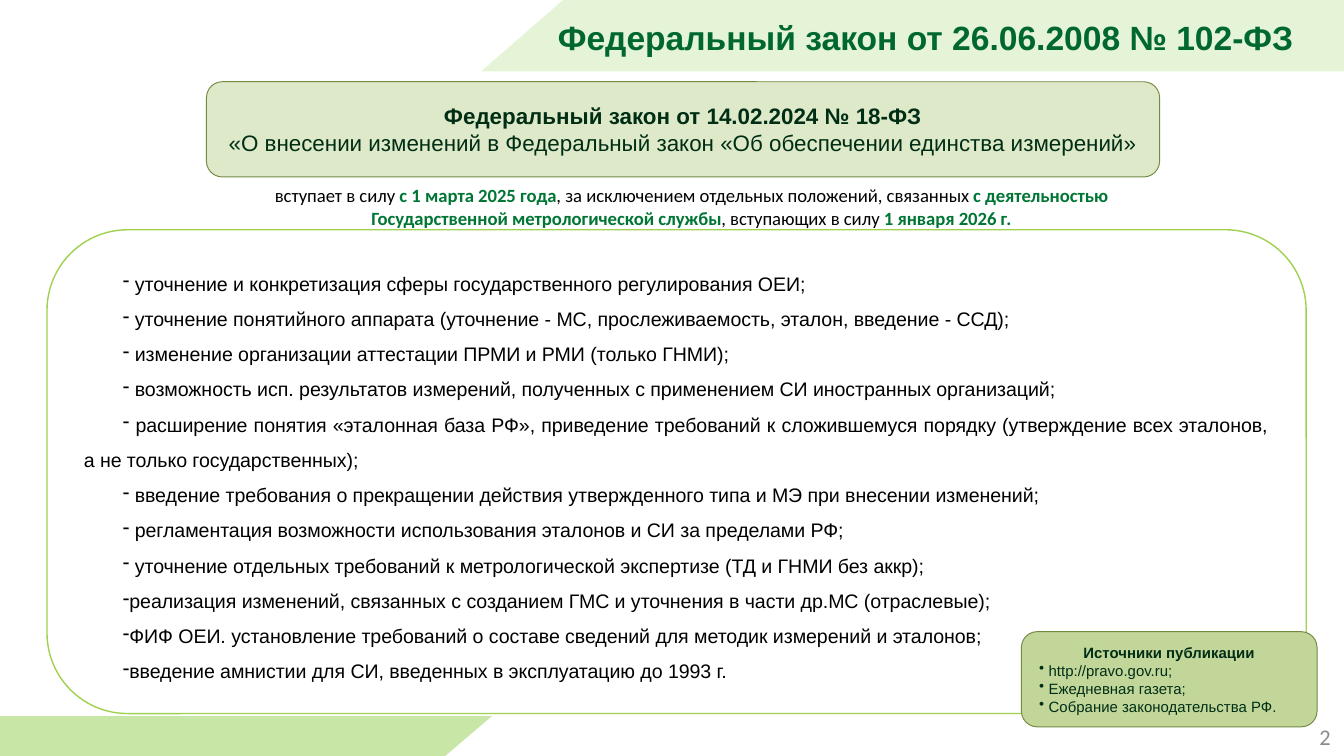
import pptx
import pptx.dml.color
import pptx.enum.shapes
import pptx.enum.text
import pptx.oxml
import pptx.oxml.ns
import pptx.util

Pt = pptx.util.Pt
RGBColor = pptx.dml.color.RGBColor
ALIGN = pptx.enum.text.PP_ALIGN
MIDDLE = pptx.enum.text.MSO_ANCHOR.MIDDLE
qn = pptx.oxml.ns.qn

LIME = RGBColor(0x92, 0xD0, 0x50)
LIME_LINE = RGBColor(0x9F, 0xD1, 0x4F)
OLIVE = RGBColor(0x9B, 0xBB, 0x59)
OLIVE_LIGHT = RGBColor(0xC2, 0xD6, 0x9A)
OLIVE_LINE = RGBColor(0x73, 0x8A, 0x42)
DARK_GREEN = RGBColor(0x00, 0x2E, 0x15)
TITLE_GREEN = RGBColor(0x00, 0x68, 0x2F)
ACCENT_GREEN = RGBColor(0x00, 0x76, 0x35)
GRAY = RGBColor(0x8C, 0x8C, 0x8C)
BLACK = RGBColor(0, 0, 0)
WHITE = RGBColor(0xFF, 0xFF, 0xFF)


def paint(shape, color, opacity, line_color=None, line_width=0):
    """Fill and outline a shape; opacity is in percent."""
    shape.shadow.inherit = False
    shape.fill.solid()
    shape.fill.fore_color.rgb = color
    if opacity < 100:
        color_node = shape.fill._xPr.find(".//" + qn("a:srgbClr"))
        alpha = pptx.oxml.parse_xml(f'<a:alpha {pptx.oxml.ns.nsdecls("a")} val="{opacity * 1000}"/>')
        color_node.append(alpha)
    if line_color is None:
        shape.line.fill.background()
    else:
        shape.line.color.rgb = line_color
        shape.line.width = Pt(line_width)


def write_para(frame, text, size, color, bold=False, align=ALIGN.LEFT, bullet=None, indent=0, font="Arial"):
    """Use the empty first paragraph or add one."""
    para = frame.paragraphs[0] if not frame.text else frame.add_paragraph()
    para.alignment = align
    if bullet:
        properties = para._p.get_or_add_pPr()
        properties.set("marL", "0")
        properties.set("indent", str(Pt(indent)))
        properties.append(pptx.oxml.parse_xml(f'<a:buChar {pptx.oxml.ns.nsdecls("a")} char="{bullet}"/>'))
    para.add_run().text = text
    para.font.name, para.font.size, para.font.bold = font, Pt(size), bold
    para.font.color.rgb = color
    return para


deck = pptx.Presentation()
deck.slide_width, deck.slide_height = Pt(720), Pt(405)
page = deck.slides.add_slide(deck.slide_layouts[5])
shapes = page.shapes
ROUNDED = pptx.enum.shapes.MSO_SHAPE.ROUNDED_RECTANGLE

# Slanted bands at the top right and bottom left
bands = [
    ([(301.7, 0), (720, 0), (720, 38.2), (257.8, 38.2)], 23),
    ([(238.5, 405), (0, 405), (0, 383.7), (263.5, 383.7)], 50),
]
for corners, opacity in bands:
    points = [(Pt(x), Pt(y)) for x, y in corners]
    builder = shapes.build_freeform(*points[0], scale=1.0)
    builder.add_line_segments(points[1:], close=True)
    paint(builder.convert_to_shape(), LIME, opacity)

# Title, moved in front of the bands
title = shapes.title
title.element.getparent().append(title.element)
title.left, title.top, title.width, title.height = Pt(286), Pt(0), Pt(420), Pt(39.6)
title.text_frame.auto_size = pptx.enum.text.MSO_AUTO_SIZE.NONE
title.text_frame.vertical_anchor = MIDDLE
write_para(title.text_frame, "Федеральный закон от 26.06.2008 № 102-ФЗ", 18, TITLE_GREEN, True, ALIGN.CENTER)

# Page number
number = shapes.add_textbox(Pt(552.2), Pt(383.8), Pt(167.8), Pt(21.6)).text_frame
number.word_wrap = True
number.vertical_anchor = MIDDLE
write_para(number, "2", 12, GRAY, align=ALIGN.RIGHT, font="Calibri")

# Amending law
law = shapes.add_shape(ROUNDED, Pt(110.6), Pt(43.8), Pt(510.6), Pt(51))
paint(law, OLIVE, 32, OLIVE_LINE, 0.5)
law.text_frame.vertical_anchor = MIDDLE
write_para(law.text_frame, "Федеральный закон от 14.02.2024 № 18-ФЗ", 12, DARK_GREEN, True, ALIGN.CENTER)
write_para(law.text_frame, "«О внесении изменений в Федеральный закон «Об обеспечении единства измерений»",
           12, DARK_GREEN, align=ALIGN.CENTER)

# Dates of entry into force
dates = shapes.add_textbox(Pt(127.4), Pt(95), Pt(486), Pt(32.4)).text_frame
dates.word_wrap = True
para = dates.paragraphs[0]
para.alignment = ALIGN.CENTER
para.font.name, para.font.size = "Calibri", Pt(10)
for text, accent in [
    ("вступает в силу ", False),
    ("с 1 марта 2025 года", True),
    (", за исключением отдельных положений, связанных ", False),
    ("с деятельностью Государственной метрологической службы", True),
    (", вступающих в силу ", False),
    ("1 января 2026 г.", True),
]:
    span = para.add_run()
    span.text = text
    span.font.bold = accent
    span.font.color.rgb = ACCENT_GREEN if accent else BLACK

# List of changes
changes = shapes.add_shape(ROUNDED, Pt(25.2), Pt(123.1), Pt(674.6), Pt(259.2))
paint(changes, WHITE, 35, LIME_LINE, 0.75)
changes.text_frame.vertical_anchor = pptx.enum.text.MSO_ANCHOR.TOP
for text in [
    " уточнение и конкретизация сферы государственного регулирования ОЕИ;",
    " уточнение понятийного аппарата (уточнение - МС, прослеживаемость, эталон, введение - ССД);",
    " изменение организации аттестации ПРМИ и РМИ (только ГНМИ);",
    " возможность исп. результатов измерений, полученных с применением СИ иностранных организаций;",
    " расширение понятия «эталонная база РФ», приведение требований к сложившемуся порядку "
    "(утверждение всех эталонов, а не только государственных);",
    " введение требования о прекращении действия утвержденного типа и МЭ при внесении изменений;",
    " регламентация возможности использования эталонов и СИ за пределами РФ;",
    " уточнение отдельных требований к метрологической экспертизе (ТД и ГНМИ без аккр);",
    "реализация изменений, связанных с созданием ГМС и уточнения в части др.МС (отраслевые);",
    "ФИФ ОЕИ. установление требований о составе сведений для методик измерений и эталонов;",
    "введение амнистии для СИ, введенных в эксплуатацию до 1993 г.",
]:
    para = write_para(changes.text_frame, text, 10.5, BLACK, align=ALIGN.JUSTIFY, bullet="-", indent=21)
    para.line_spacing = 1.5

# Publication sources
sources = shapes.add_shape(ROUNDED, Pt(547.2), Pt(338.4), Pt(158.4), Pt(51))
paint(sources, OLIVE_LIGHT, 100, OLIVE_LINE, 0.5)
sources.text_frame.vertical_anchor = MIDDLE
write_para(sources.text_frame, "Источники публикации", 8, DARK_GREEN, True, ALIGN.CENTER)
for text in [" http://pravo.gov.ru;", " Ежедневная газета;", " Собрание законодательства РФ."]:
    write_para(sources.text_frame, text, 8, DARK_GREEN, bullet="•")

deck.save("out.pptx")
